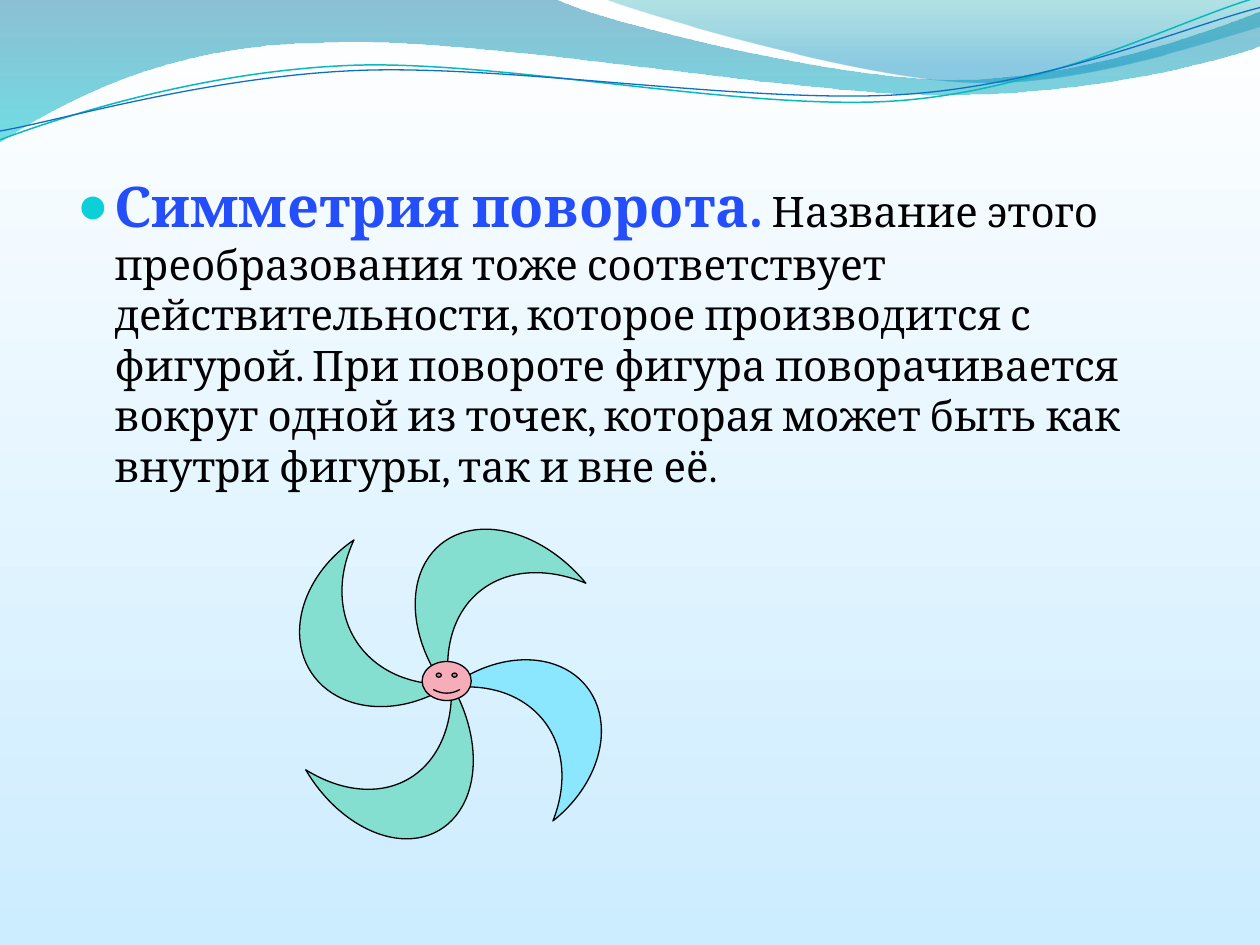
"""Build a slide on rotational symmetry with a four-bladed pinwheel."""
from dataclasses import dataclass

from lxml.etree import SubElement
from pptx import Presentation
from pptx.dml.color import RGBColor as Rgb
from pptx.dml.fill import FillFormat as Fill
from pptx.enum.shapes import MSO_SHAPE as Kind
from pptx.enum.text import MSO_ANCHOR as Anchor, MSO_AUTO_SIZE as Fit
from pptx.oxml.ns import qn
from pptx.shapes.base import BaseShape as Shape
from pptx.slide import Slide
from pptx.util import Inches, Pt


@dataclass(frozen=True)
class Stop:
    color: str
    place: float
    alpha: int = 100


@dataclass(frozen=True)
class Theme:
    font: str = "Cambria"
    head: str = "254EFB"
    ink: str = "000000"
    dot: str = "0BD0D9"
    green: str = "85DFD0"
    blue: str = "8BE7FD"
    pink: str = "F5ADB9"
    teal: str = "0AB8BF"
    navy: str = "0F6FC6"
    large: int = 32
    small: int = 24
    edge: float = 0.75
    sky: tuple[Stop, ...] = (Stop("FFFFFF", 0), Stop("CCECFF", 1))
    broad: tuple[Stop, ...] = (Stop("0074A1", 0, 45), Stop("00C6CF", 1, 55))
    slim: tuple[Stop, ...] = (Stop("00A1A9", 0, 30), Stop("008BBF", 0.8, 45))


@dataclass(frozen=True)
class Wave:
    start: tuple[float, float]
    steps: tuple[tuple[float, ...], ...]
    stops: tuple[Stop, ...] = ()
    color: str = ""
    width: float = 0


@dataclass(frozen=True)
class Part:
    box: tuple[float, float, float, float]
    color: str
    turn: float = 0
    kind: Kind = Kind.MOON
    adjust: float = 0.5


GRID = 1000
LOOK = Theme()
WAVES = (
    Wave((0, -0.01), (
        (4.4, -0.01), (4.76, 0.17, 6.64, 0.63, 7.58, 0.63),
        (8.53, 0.63, 9.58, 0.26, 10, 0.09), (10.01, 0.36),
        (9.83, 0.44, 8.7, 0.76, 7.46, 0.75),
        (6.22, 0.75, 3.82, 0.28, 2.57, 0.34),
        (1.29, 0.35, 0.46, 0.83, -0.01, 1.13), (0, -0.01)), LOOK.broad),
    Wave((4.79, -0.01), (
        (5.09, 0.11, 6.82, 0.62, 7.69, 0.65),
        (8.56, 0.69, 9.61, 0.32, 10, 0.21), (10, 0), (4.79, -0.01)), LOOK.slim),
    Wave((0, 1.11), (
        (0.48, 0.93, 1.58, 0.57, 2.77, 0.52),
        (3.95, 0.47, 5.93, 0.89, 7.13, 0.8),
        (8.33, 0.71, 9.38, 0.15, 9.98, -0.02)), color=LOOK.teal, width=0.85),
    Wave((0, 1.04), (
        (0.47, 0.96, 1.64, 0.61, 2.83, 0.56),
        (4.03, 0.51, 5.97, 0.83, 7.17, 0.75),
        (8.36, 0.67, 9.41, 0.21, 10, 0.06)), color=LOOK.navy, width=0.75),
)
WHEEL = (
    Part((2.4, 4.41, 0.87, 1.38), LOOK.green, 326),
    Part((3.32, 4, 0.97, 1.39), LOOK.green, 50.6),
    Part((3.88, 5.05, 0.87, 1.34), LOOK.blue, 141.8),
    Part((2.77, 5.51, 0.95, 1.34), LOOK.green, 239.6),
    Part((3.35, 5.25, 0.39, 0.31), LOOK.pink, 0, Kind.SMILEY_FACE, 0.0465),
)
HEAD = "Симметрия поворота."
BODY = (" Название этого преобразования тоже соответствует действительности, "
        "которое производится с фигурой. При повороте фигура поворачивается "
        "вокруг одной из точек, которая может быть как внутри фигуры, "
        "так и вне её.")


def blend(fill: Fill, stops: tuple[Stop, ...]) -> None:
    """Fill with a gradient that runs from top to bottom."""
    fill.gradient()
    fill.gradient_angle = 270
    for mark, stop in zip(fill.gradient_stops, stops):
        mark.color.rgb = Rgb.from_string(stop.color)
        mark.position = stop.place
        if stop.alpha < 100:
            tint = mark._gs.find(qn("a:srgbClr"))
            SubElement(tint, qn("a:alpha"), val=str(stop.alpha * 1000))


def stroke(shape: Shape, color: str, width: float) -> None:
    """Give the shape a plain line."""
    shape.line.color.rgb = Rgb.from_string(color)
    shape.line.width = Pt(width)


def bend(shape: Shape, wave: Wave) -> None:
    """Turn the straight segments of six-number steps into cubic curves."""
    ends = [wave.start, *(step[-2:] for step in wave.steps)]
    left, top = (min(axis) for axis in zip(*ends))
    lines = list(shape._element.iter(qn("a:lnTo")))
    for line, step in zip(lines, wave.steps):
        if len(step) == 2:
            continue
        curve = line.makeelement(qn("a:cubicBezTo"))
        for x, y in zip(step[::2], step[1::2]):
            SubElement(curve, qn("a:pt"), x=str(round((x - left) * GRID)),
                       y=str(round((y - top) * GRID)))
        line.getparent().replace(line, curve)


def draw_wave(slide: Slide, wave: Wave) -> None:
    """Draw a shaded band or an open line."""
    ends = [tuple(round(n * GRID) for n in point) for point in
            (wave.start, *(step[-2:] for step in wave.steps))]
    pen = slide.shapes.build_freeform(*ends[0], scale=Inches(1) / GRID)
    pen.add_line_segments(ends[1:], close=bool(wave.stops))
    shape = pen.convert_to_shape()
    bend(shape, wave)
    shape.shadow.inherit = False
    if wave.stops:
        blend(shape.fill, wave.stops)
        shape.line.fill.background()
    else:
        shape.fill.background()
        stroke(shape, wave.color, wave.width)


def draw_part(slide: Slide, part: Part) -> None:
    """Draw one piece of the pinwheel."""
    shape = slide.shapes.add_shape(part.kind, *map(Inches, part.box))
    shape.shadow.inherit = False
    shape.rotation = part.turn
    shape.adjustments[0] = part.adjust
    shape.fill.solid()
    shape.fill.fore_color.rgb = Rgb.from_string(part.color)
    stroke(shape, LOOK.ink, LOOK.edge)


def write_body(slide: Slide) -> None:
    """Write the bulleted text in the body placeholder."""
    body = slide.placeholders[1]
    body.left, body.top, body.width, body.height = map(Inches, (0.51, 1.31, 9, 5.59))
    frame = body.text_frame
    frame.word_wrap = True
    frame.auto_size = Fit.NONE
    frame.vertical_anchor = Anchor.TOP
    para = frame.paragraphs[0]
    props = para._p.get_or_add_pPr()
    props.set("marL", str(Inches(0.3)))
    props.set("indent", str(-Inches(0.3)))
    tint = SubElement(props, qn("a:buClr"))
    SubElement(tint, qn("a:srgbClr"), val=LOOK.dot)
    SubElement(props, qn("a:buSzPct"), val="95000")
    SubElement(props, qn("a:buChar"), char="●")
    para.space_before = Pt(0)
    for text, size, color, bold in ((HEAD, LOOK.large, LOOK.head, True),
                                    (BODY, LOOK.small, LOOK.ink, False)):
        run = para.add_run()
        run.text = text
        run.font.name = LOOK.font
        run.font.size = Pt(size)
        run.font.bold = bold
        run.font.color.rgb = Rgb.from_string(color)


def main() -> None:
    """Build and save the slide."""
    deck = Presentation()
    deck.slide_width, deck.slide_height = Inches(10), Inches(7.5)
    slide = deck.slides.add_slide(deck.slide_layouts[1])
    title = slide.shapes.title._element
    title.getparent().remove(title)
    blend(slide.background.fill, LOOK.sky)
    for wave in WAVES:
        draw_wave(slide, wave)
    write_body(slide)
    for part in WHEEL:
        draw_part(slide, part)
    deck.save("out.pptx")


if __name__ == "__main__":
    main()
